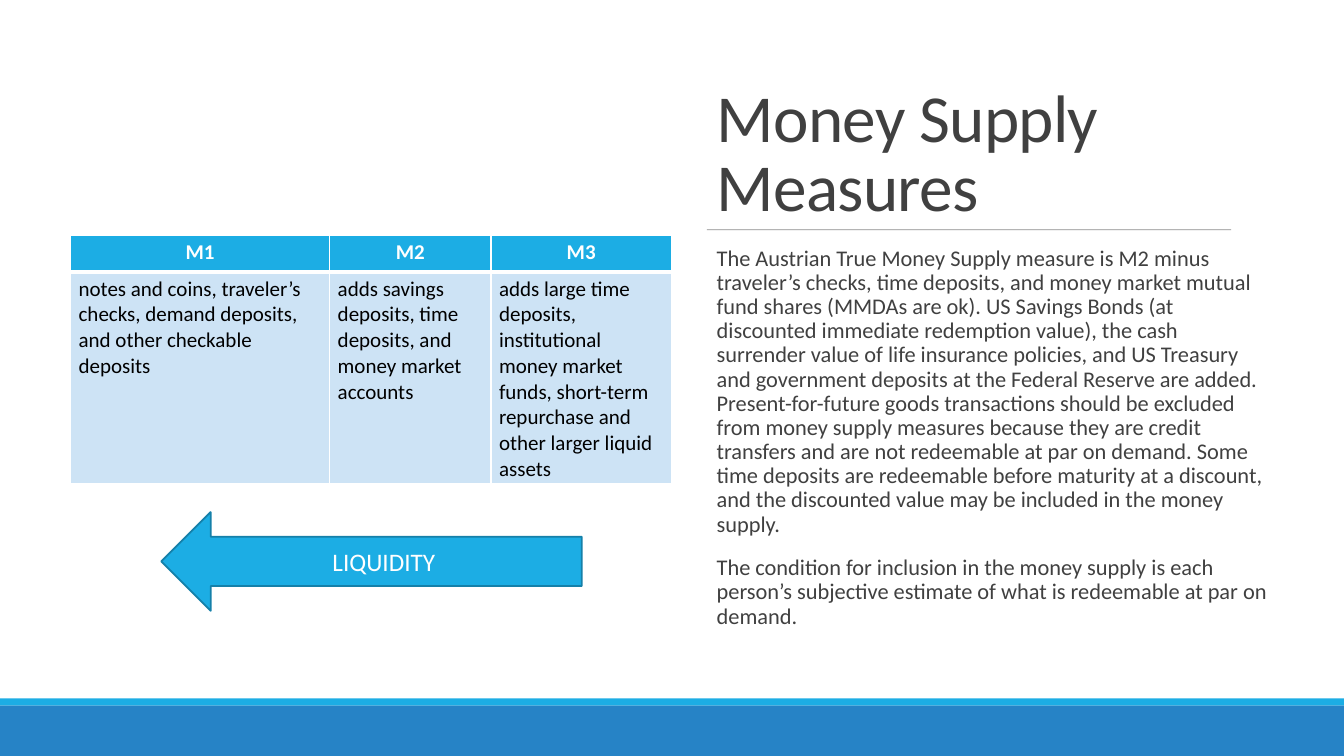
from typing import Any, NamedTuple

import pptx
import pptx.dml.color
import pptx.enum.shapes
import pptx.enum.text
import pptx.oxml
import pptx.oxml.ns
import pptx.util

SCALE = 9144  # EMU per px, 100 px to the inch
FONT = "Calibri"
WHITE, BLACK, DARK, GRAY = "FFFFFF", "000000", "404040", "808080"
CYAN, BLUE, PALE, EDGE = "1CADE4", "2683C6", "CDE3F5", "1580A9"
SHAPE = pptx.enum.shapes.MSO_SHAPE
ALIGN = pptx.enum.text.PP_ALIGN
ANCHOR = pptx.enum.text.MSO_ANCHOR


class Box(NamedTuple):
    left: int
    top: int
    width: int
    height: int


class Block(NamedTuple):
    box: Box
    kind: Any
    fill: str


class Style(NamedTuple):
    size: int
    color: str
    bold: bool = False
    align: Any = ALIGN.LEFT
    lead: float = 1.0
    before: int = 0
    after: int = 0
    track: int = 0


class Measure(NamedTuple):
    name: str
    scope: str
    width: int


class Row(NamedTuple):
    height: int
    fill: str
    style: Style
    edges: dict[str, int]


BANDS = [
    Block(Box(0, 693, 1333, 7), SHAPE.RECTANGLE, CYAN),
    Block(Box(0, 700, 1333, 50), SHAPE.RECTANGLE, BLUE),
]
ARROW = Block(Box(160, 508, 417, 98), SHAPE.LEFT_ARROW, CYAN)
MEASURES = [
    Measure("M1", "notes and coins, traveler’s checks, demand deposits, "
            "and other checkable deposits", 257),
    Measure("M2", "adds savings deposits, time deposits, "
            "and money market accounts", 160),
    Measure("M3", "adds large time deposits, institutional money market funds, "
            "short-term repurchase and other larger liquid assets", 179),
]
ROWS = [
    Row(36, CYAN, Style(15, WHITE, True, ALIGN.CENTER),
        {"L": 1, "R": 1, "T": 1, "B": 3}),
    Row(210, PALE, Style(15, BLACK), {"L": 1, "R": 1, "T": 3, "B": 1}),
]
TITLE = "Money Supply Measures"
BODY = [
    "The Austrian True Money Supply measure is M2 minus traveler’s checks, "
    "time deposits, and money market mutual fund shares (MMDAs are ok). "
    "US Savings Bonds (at discounted immediate redemption value), the cash "
    "surrender value of life insurance policies, and US Treasury and government "
    "deposits at the Federal Reserve are added. Present-for-future goods "
    "transactions should be excluded from money supply measures because they "
    "are credit transfers and are not redeemable at par on demand. Some time "
    "deposits are redeemable before maturity at a discount, and the discounted "
    "value may be included in the money supply.",
    "The condition for inclusion in the money supply is each person’s "
    "subjective estimate of what is redeemable at par on demand.",
]


def px(count: int) -> pptx.util.Emu:
    return pptx.util.Emu(count * SCALE)


def place(box: Box) -> list[pptx.util.Emu]:
    return [px(side) for side in box]


def rgb(code: str) -> pptx.dml.color.RGBColor:
    return pptx.dml.color.RGBColor.from_string(code)


def paint(item: Any, code: str) -> None:
    item.fill.solid()
    item.fill.fore_color.rgb = rgb(code)


def node(tag: str, inner: str = "", attrs: str = "") -> Any:
    """Make one DrawingML element."""
    space = pptx.oxml.ns.nsdecls("a")
    return pptx.oxml.parse_xml(f"<a:{tag} {space} {attrs}>{inner}</a:{tag}>")


def write(frame: Any, texts: list[str], style: Style) -> None:
    frame.word_wrap = True
    for index, text in enumerate(texts):
        para = frame.add_paragraph() if index else frame.paragraphs[0]
        para.alignment = style.align
        para.line_spacing = style.lead
        para.space_before = pptx.util.Pt(style.before)
        para.space_after = pptx.util.Pt(style.after)
        run = para.add_run()
        run.text = text
        run.font.name = FONT
        run.font.size = pptx.util.Pt(style.size)
        run.font.bold = style.bold
        run.font.color.rgb = rgb(style.color)
        if style.track:
            run.font._element.set("spc", str(style.track))


def add_block(slide: Any, block: Block) -> Any:
    shape = slide.shapes.add_shape(block.kind, *place(block.box))
    shape.shadow.inherit = False
    paint(shape, block.fill)
    shape.line.fill.background()
    return shape


def add_text(slide: Any, box: Box, texts: list[str], style: Style,
             anchor: Any) -> None:
    frame = slide.shapes.add_textbox(*place(box)).text_frame
    frame.vertical_anchor = anchor
    frame.margin_left = px(10)
    frame.margin_right = px(0)
    write(frame, texts, style)


def add_rule(slide: Any) -> None:
    rule = slide.shapes.add_connector(
        pptx.enum.shapes.MSO_CONNECTOR.STRAIGHT,
        px(701), px(228), px(1221), px(228))
    rule.line.color.rgb = rgb(GRAY)
    rule.line.width = pptx.util.Pt(0.5)
    tint = next(rule._element.spPr.iter(pptx.oxml.ns.qn("a:srgbClr")))
    tint.append(node("alpha", attrs='val="90000"'))
    rule._element.spPr.append(node("effectLst"))


def fill_cell(cell: Any, text: str, row: Row) -> None:
    cell.margin_left = cell.margin_right = px(8)
    cell.margin_top = cell.margin_bottom = px(4)
    paint(cell, row.fill)
    write(cell.text_frame, [text], row.style)
    props = cell._tc.get_or_add_tcPr()
    ink = f'<a:solidFill><a:srgbClr val="{WHITE}"/></a:solidFill>'
    for index, (side, width) in enumerate(row.edges.items()):
        edge = node(f"ln{side}", ink, f'w="{pptx.util.Pt(width)}"')
        props.insert(index, edge)


def add_table(slide: Any) -> None:
    box = Box(70, 234, sum(item.width for item in MEASURES),
              sum(row.height for row in ROWS))
    table = slide.shapes.add_table(len(ROWS), len(MEASURES), *place(box)).table
    for line, row in zip(table.rows, ROWS):
        line.height = px(row.height)
    for col, item in enumerate(MEASURES):
        table.columns[col].width = px(item.width)
        for index, text in enumerate((item.name, item.scope)):
            fill_cell(table.cell(index, col), text, ROWS[index])


def main() -> None:
    deck = pptx.Presentation()
    deck.slide_width, deck.slide_height = px(1333), px(750)
    slide = deck.slides.add_slide(deck.slide_layouts[6])
    for band in BANDS:
        add_block(slide, band)
    add_text(slide, Box(701, 69, 561, 159), [TITLE],
             Style(48, DARK, lead=0.85, track=-50), ANCHOR.BOTTOM)
    add_rule(slide)
    add_text(slide, Box(701, 240, 561, 401), BODY,
             Style(16, DARK, lead=0.9, before=12, after=2), ANCHOR.TOP)
    add_table(slide)
    arrow = add_block(slide, ARROW)
    arrow.line.color.rgb = rgb(EDGE)
    arrow.line.width = pptx.util.Pt(1.25)
    arrow.text_frame.vertical_anchor = ANCHOR.MIDDLE
    write(arrow.text_frame, ["LIQUIDITY"], Style(18, WHITE, align=ALIGN.CENTER))
    deck.save("out.pptx")


if __name__ == "__main__":
    main()
